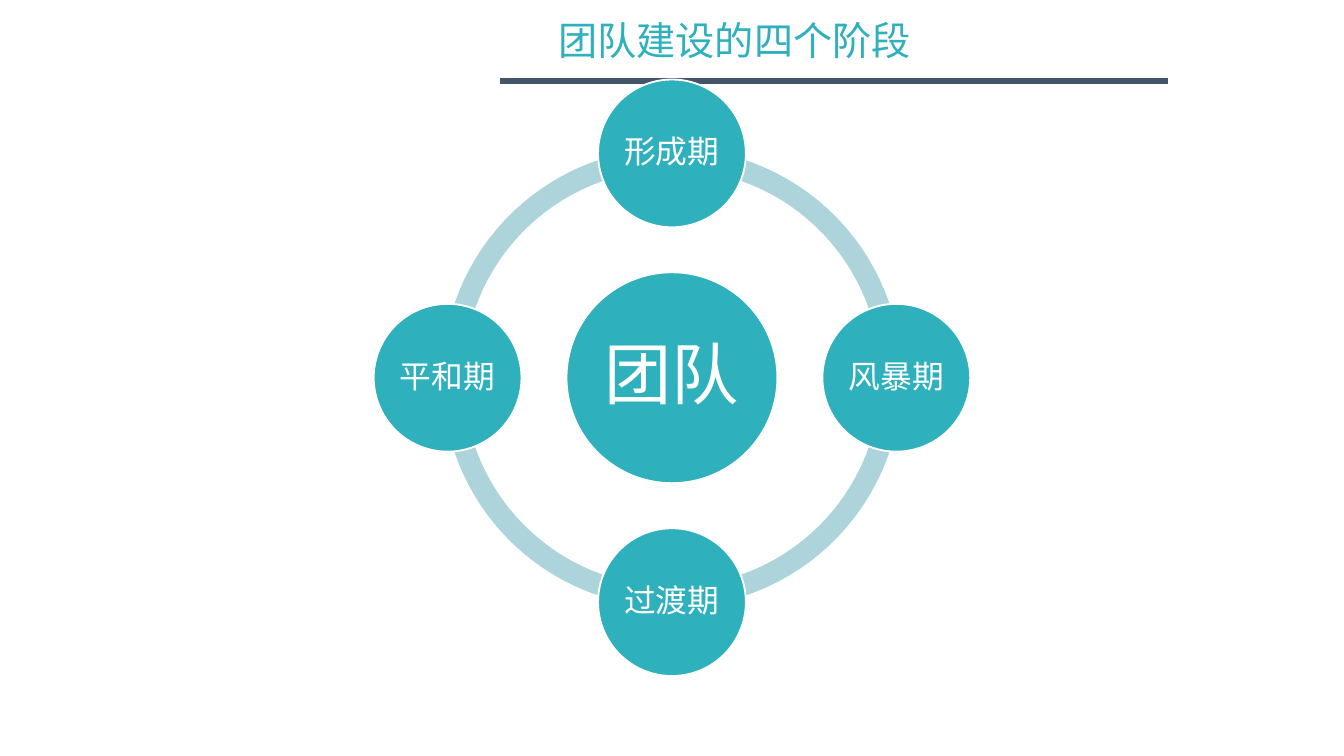
from lxml import etree
from pptx import Presentation
from pptx.dml.color import RGBColor
from pptx.enum.shapes import MSO_CONNECTOR, MSO_SHAPE
from pptx.enum.text import MSO_ANCHOR, MSO_AUTO_SIZE, PP_ALIGN
from pptx.oxml.ns import qn
from pptx.util import Pt

STRAIGHT = MSO_CONNECTOR.STRAIGHT
PANEL, ARC, CIRCLE = MSO_SHAPE.ROUNDED_RECTANGLE, MSO_SHAPE.BLOCK_ARC, MSO_SHAPE.OVAL
MIDDLE, CENTER, NO_AUTOFIT = MSO_ANCHOR.MIDDLE, PP_ALIGN.CENTER, MSO_AUTO_SIZE.NONE

TITLE = "团队建设的四个阶段"
HUB = "团队"
STAGES = [("形成期", 0, -1), ("风暴期", 1, 0), ("过渡期", 0, 1), ("平和期", -1, 0)]
ARC_ANGLES = [(180, 270), (90, 180), (0, 90), (270, 0)]

TEAL, PALE_TEAL, NAVY, WHITE = "2EB0BD", "ADD4DB", "44546A", "FFFFFF"
CJK_FONT, LATIN_FONT = "Noto Sans CJK SC", "Calibri"
CENTER_X, CENTER_Y = 360, 202.4
ORBIT, RING_SIZE, RING_THICKNESS = 120.2, 246.2, 0.046
HUB_SIZE, STAGE_SIZE = 113, 79.2


def color(hex_value):
    return RGBColor.from_string(hex_value)


def write(owner, text, size, font_name, hex_value, side, top, wrap):
    frame = owner.text_frame
    frame.text = text
    frame_format = {
        "auto_size": NO_AUTOFIT, "word_wrap": wrap, "vertical_anchor": MIDDLE,
        "margin_left": Pt(side), "margin_right": Pt(side),
        "margin_top": Pt(top), "margin_bottom": Pt(top),
    }
    for name, value in frame_format.items():
        setattr(frame, name, value)
    paragraph = frame.paragraphs[0]
    paragraph.alignment, paragraph.line_spacing = CENTER, 0.9
    run = paragraph.runs[0]
    for name, value in {"name": font_name, "size": Pt(size), "bold": False}.items():
        setattr(run.font, name, value)
    run.font.color.rgb = color(hex_value)
    east_asian = etree.SubElement(run.font._element, qn("a:ea"))
    east_asian.set("typeface", CJK_FONT)


def add_filled(slide, kind, box, fill, outline=None):
    shape = slide.shapes.add_shape(kind, *map(Pt, box))
    shape.shadow.inherit = False
    shape.fill.solid()
    shape.fill.fore_color.rgb = color(fill)
    if outline:
        shape.line.color.rgb = color(outline)
        shape.line.width = Pt(1)
    else:
        shape.line.fill.background()
    return shape


def square_at(x, y, size):
    return x - size / 2, y - size / 2, size, size


def add_circle(slide, text, x, y, size, font_size, margin):
    circle = add_filled(slide, CIRCLE, square_at(x, y, size), TEAL, WHITE)
    write(circle, text, font_size, LATIN_FONT, WHITE, margin, margin, False)


def add_heading(slide):
    title = slide.shapes.title
    place = {"left": 16.5, "top": 0, "width": 754, "height": 45.4}
    for name, value in place.items():
        setattr(title, name, Pt(value))
    write(title, TITLE, 21, CJK_FONT, TEAL, 0, 3.6, True)
    rule = slide.shapes.add_connector(STRAIGHT, Pt(268), Pt(43.4), Pt(626), Pt(43.4))
    rule.line.color.rgb = color(NAVY)
    rule.line.width = Pt(3)
    etree.SubElement(rule._element.spPr, qn("a:effectLst"))


def add_cycle(slide):
    add_filled(slide, PANEL, (88.6, 48.2, 572.4, 335.5), WHITE)
    for start, end in ARC_ANGLES:
        arc = add_filled(slide, ARC, square_at(CENTER_X, CENTER_Y, RING_SIZE), PALE_TEAL)
        for index, value in enumerate((start * 0.6, end * 0.6, RING_THICKNESS)):
            arc.adjustments[index] = value
    add_circle(slide, HUB, CENTER_X, CENTER_Y, HUB_SIZE, 36, 3.6)
    for stage, dx, dy in STAGES:
        add_circle(slide, stage, CENTER_X + dx * ORBIT, CENTER_Y + dy * ORBIT,
                   STAGE_SIZE, 17, 1.5)


def main():
    """Build the slide on the four stages of team building."""
    deck = Presentation()
    deck.slide_width, deck.slide_height = Pt(720), Pt(405)
    slide = deck.slides.add_slide(deck.slide_layouts[5])
    add_heading(slide)
    add_cycle(slide)
    deck.save("out.pptx")


if __name__ == "__main__":
    main()
